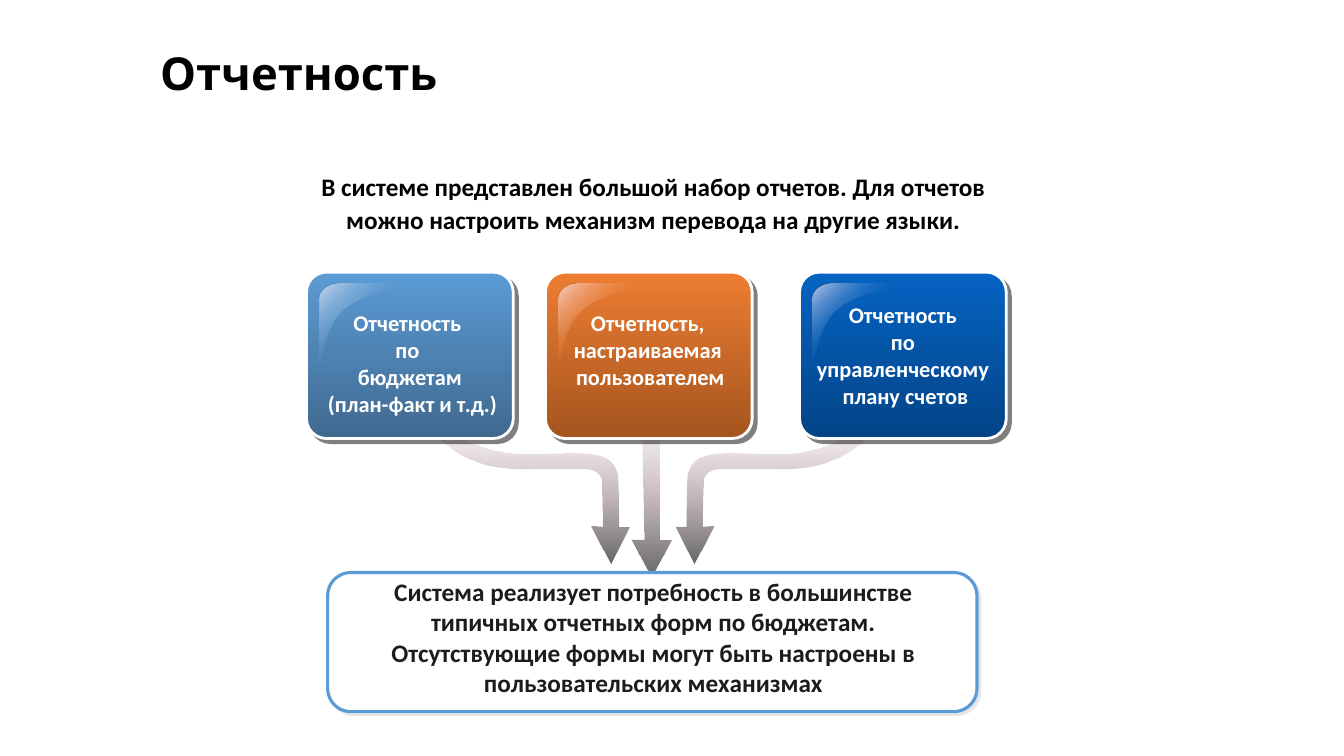
from lxml import etree
from pptx import Presentation
from pptx.dml.color import RGBColor
from pptx.enum import shapes, text
from pptx.oxml import ns
from pptx.util import Inches, Pt

COLORS = {
    "white": "FFFFFF", "black": "000000", "ink": "1C1C1C", "plum": "954F72",
    "blue": "5B9BD5", "blue_dark": "40698F", "blue_light": "C6D6EC",
    "orange": "ED7D31", "orange_dark": "A55520", "orange_light": "F6CDC1",
    "navy": "0563C1", "navy_dark": "034488", "navy_light": "BFC8E4",
    "gray": "E7E6E6",
}
CARD_TOP, CARD_WIDTH, CARD_HEIGHT = 2.7, 2.05, 1.65
MIRROR_SUM = 12.94

SIDE_ARROW = [
    (4.16, 4.08), (4.16, 4.08, 4.4, 4.69, 5.24, 4.65),
    (5.52, 4.65, 5.79, 4.65, 5.79, 4.65), (5.79, 4.65, 5.97, 4.65, 5.96, 4.79),
    (5.97, 5, 5.97, 5.22, 5.97, 5.22), (5.85, 5.21), (6.05, 5.59), (6.24, 5.22),
    (6.13, 5.22), (6.13, 5.22, 6.13, 4.97, 6.12, 4.72),
    (6.1, 4.53, 5.9, 4.51, 5.9, 4.51), (5.73, 4.47, 5.5, 4.51, 5.11, 4.5),
    (4.47, 4.44, 4.36, 4.08, 4.36, 4.08),
]
MIDDLE_ARROW = [(6.36, 4.01), (6.39, 5.35), (6.26, 5.35), (6.46, 5.72),
                (6.66, 5.35), (6.54, 5.35), (6.54, 4.01)]
HIGHLIGHT = [
    (0.34, 0.11), (0.22, 0.11, 0.13, 0.18, 0.13, 0.27), (0.13, 0.92),
    (0.18, 0.94, 0.15, 0.54, 0.41, 0.35), (0.66, 0.16, 1.15, 0.15, 1.14, 0.11),
]
CARDS = [
    (3.04, "blue", (3.09, 3.02, 1.95, 1.18),
     ["Отчетность ", "по ", "бюджетам", " (план-факт и т.д.)"]),
    (5.41, "orange", (5.58, 3.02, 1.74, 0.91),
     ["Отчетность, ", "настраиваемая ", "пользователем"]),
    (7.93, "navy", (7.99, 2.94, 1.98, 1.18),
     ["Отчетность ", "по ", "управленческому ", "плану счетов"]),
]
INTRO = ("В системе представлен большой набор отчетов. Для отчетов "
         "можно настроить механизм перевода на другие языки.")
SUMMARY = ("Система реализует потребность в большинстве типичных отчетных форм "
           "по бюджетам. Отсутствующие формы могут быть настроены в "
           "пользовательских механизмах")


def rgb(name):
    return RGBColor.from_string(COLORS[name])


def add_color(parent, name, opacity):
    color = etree.SubElement(parent, ns.qn("a:srgbClr"), val=COLORS[name])
    if opacity < 100:
        etree.SubElement(color, ns.qn("a:alpha"), val=str(opacity * 1000))


def set_gradient(shape, stops, angle):
    shape.fill.gradient()
    shape.fill.gradient_angle = 360 - angle
    stop_list = shape._element.spPr.find(".//" + ns.qn("a:gsLst"))
    for stop in list(stop_list):
        stop_list.remove(stop)
    for position, name, opacity in stops:
        stop = etree.SubElement(stop_list, ns.qn("a:gs"), pos=str(position * 1000))
        add_color(stop, name, opacity)


def set_shadow(shape, name, opacity, distance):
    effects = shape._element.spPr.find(ns.qn("a:effectLst"))
    shadow = etree.SubElement(effects, ns.qn("a:outerShdw"), blurRad="0",
                              dist=str(Pt(distance)), dir="2700000",
                              algn="ctr", rotWithShape="0")
    add_color(shadow, name, opacity)


def transform(outline, scale_x=1, shift_x=0, shift_y=0):
    return [tuple(value + shift_y if index % 2 else value * scale_x + shift_x
                  for index, value in enumerate(step)) for step in outline]


def bend_segments(shape, outline, left, top):
    segments = shape._element.spPr.findall(".//" + ns.qn("a:lnTo"))
    for segment, step in zip(segments, outline[1:]):
        if len(step) == 2:
            continue
        curve = etree.Element(ns.qn("a:cubicBezTo"))
        for x, y in zip(step[::2], step[1::2]):
            etree.SubElement(curve, ns.qn("a:pt"), x=str(Inches(x) - left),
                             y=str(Inches(y) - top))
        segment.getparent().replace(segment, curve)


def add_outline(container, outline, stops, angle):
    corners = [(Inches(step[-2]), Inches(step[-1])) for step in outline]
    builder = container.build_freeform(*corners[0])
    builder.add_line_segments(corners[1:], close=True)
    shape = builder.convert_to_shape()
    left, top = (min(values) for values in zip(*corners))
    bend_segments(shape, outline, left, top)
    shape.shadow.inherit = False
    set_gradient(shape, stops, angle)
    shape.line.fill.background()


def add_rounded_box(container, box, radius, line_color, line_width):
    shape = container.add_shape(shapes.MSO_SHAPE.ROUNDED_RECTANGLE,
                                *map(Inches, box))
    shape.adjustments[0] = radius
    shape.shadow.inherit = False
    shape.line.color.rgb = rgb(line_color)
    shape.line.width = Pt(line_width)
    return shape


def add_text(slide, box, lines, size, color, font="Calibri", wrap=True, grow=True,
             align=text.PP_ALIGN.CENTER, spacing=None):
    frame = slide.shapes.add_textbox(*map(Inches, box)).text_frame
    frame.word_wrap = wrap
    frame.auto_size = (text.MSO_AUTO_SIZE.SHAPE_TO_FIT_TEXT if grow
                       else text.MSO_AUTO_SIZE.NONE)
    frame.text = "\n".join(lines)
    font_format = {"name": font, "size": Pt(size), "bold": True}
    for paragraph in frame.paragraphs:
        paragraph.alignment = align
        paragraph.line_spacing = spacing
        for run in paragraph.runs:
            for key, value in font_format.items():
                setattr(run.font, key, value)
            run.font.color.rgb = rgb(color)


def add_arrows(slide):
    mirrored_arrow = transform(SIDE_ARROW, scale_x=-1, shift_x=MIRROR_SUM)
    for outline in (SIDE_ARROW, MIDDLE_ARROW, mirrored_arrow):
        add_outline(slide.shapes, outline, [(0, "plum", 0), (100, "black", 60)], 90)


def add_card(slide, left, color):
    group = slide.shapes.add_group_shape().shapes
    card = add_rounded_box(group, (left, CARD_TOP, CARD_WIDTH, CARD_HEIGHT),
                           0.119, "white", 2)
    set_gradient(card, [(0, color, 100), (100, color + "_dark", 100)], 90)
    set_shadow(card, "black", 50, 4.2)
    light = color + "_light"
    add_outline(group, transform(HIGHLIGHT, shift_x=left, shift_y=CARD_TOP),
                [(0, light, 100), (50, color, 0), (100, light, 100)], 45)


def add_summary(slide):
    panel = add_rounded_box(slide.shapes, (3.25, 5.68, 6.44, 1.38),
                            0.167, "blue", 2.25)
    panel.fill.solid()
    panel.fill.fore_color.rgb = rgb("white")
    set_shadow(panel, "gray", 100, 2.8)
    add_text(slide, (3.35, 5.67, 6.26, 1.31), [SUMMARY], 18, "ink")


def main():
    presentation = Presentation()
    presentation.slide_width = Inches(13.33)
    presentation.slide_height = Inches(7.5)
    slide = presentation.slides.add_slide(presentation.slide_layouts[6])
    add_arrows(slide)
    for left, color, label_box, lines in CARDS:
        add_card(slide, left, color)
        add_text(slide, label_box, lines, 16, "white", wrap=False)
    add_text(slide, (2.94, 1.62, 7.08, 0.77), [INTRO], 18, "black", spacing=1.1)
    add_summary(slide)
    add_text(slide, (1.49, 0.46, 10.73, 0.63), ["Отчетность"], 32.4, "black",
             font="Karla", grow=False, align=text.PP_ALIGN.LEFT, spacing=0.9)
    presentation.save("out.pptx")


if __name__ == "__main__":
    main()
